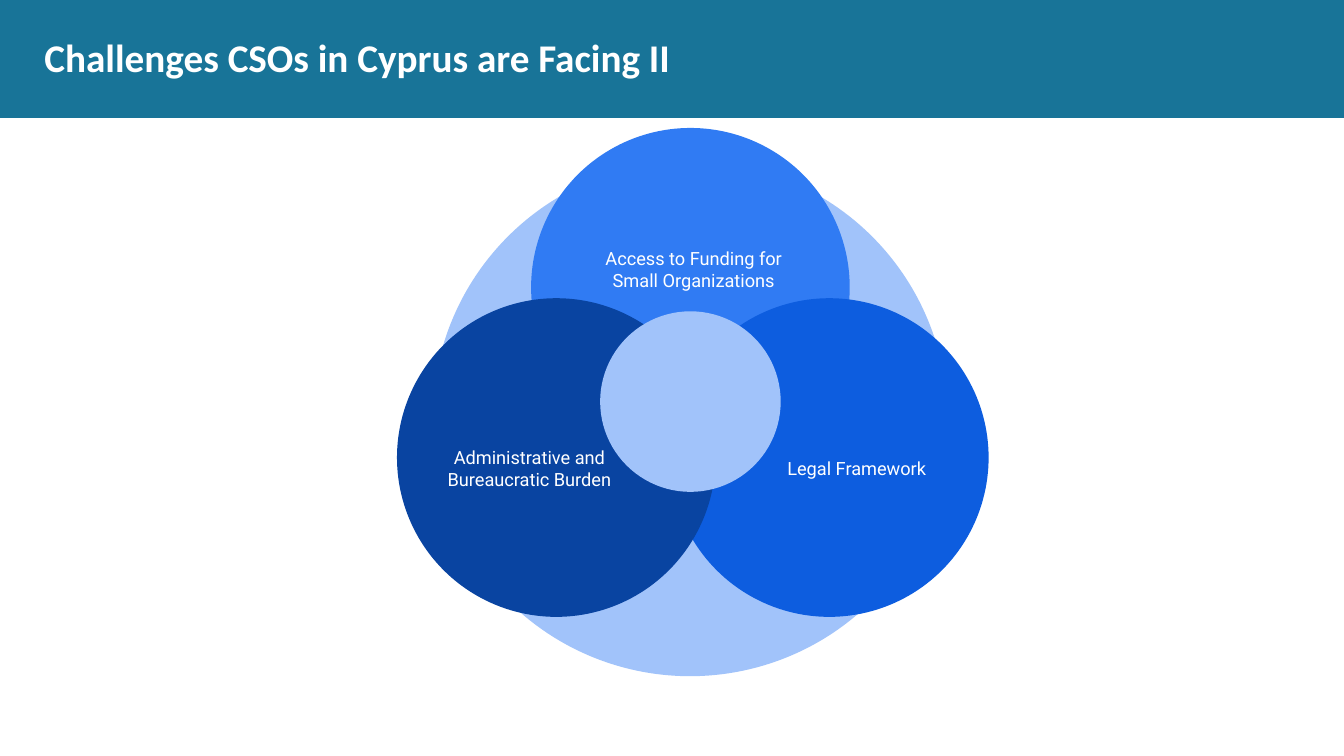
"""Build a slide with three overlapping circles naming challenges for CSOs in Cyprus."""
from pptx import Presentation
from pptx.dml.color import RGBColor
from pptx.enum.shapes import MSO_SHAPE as Preset
from pptx.enum.text import MSO_ANCHOR as Anchor, PP_ALIGN as Align
from pptx.util import Cm, Pt

TITLE = "Challenges CSOs in Cyprus are Facing II"
WHITE, TEAL, PALE = "FFFFFF", "187498", "A1C3FA"
SLIDE_WIDTH, SLIDE_HEIGHT, BAND_HEIGHT = 33.87, 19.05, 2.97

DISC = (17.39, 10.55, 12.98)
HUB = (17.4, 10.12, 4.55)
PETAL_SIZE = 8.03
LABEL_WIDTH, LABEL_HEIGHT = 5.54, 2.59
CHALLENGES = [
    ("Access to Funding for Small Organizations", "307BF3", (17.4, 7.24), (17.48, 6.78)),
    ("Legal Framework", "0D5DDF", (20.9, 11.53), (21.59, 11.79)),
    ("Administrative and Bureaucratic Burden", "0944A1", (14.02, 11.53), (13.34, 11.79)),
]


def color(code):
    return RGBColor.from_string(code)


def box(x, y, width, height):
    """Return the Cm frame centred on x, y."""
    return Cm(x - width / 2), Cm(y - height / 2), Cm(width), Cm(height)


def add_filled(slide, preset, frame, fill):
    shape = slide.shapes.add_shape(preset, *frame)
    shape.shadow.inherit = False
    shape.fill.solid()
    shape.fill.fore_color.rgb = color(fill)
    shape.line.fill.background()
    return shape


def add_circle(slide, x, y, size, fill):
    add_filled(slide, Preset.OVAL, box(x, y, size, size), fill)


def write(holder, text, font, size, inset, align, bold=False):
    frame = holder.text_frame
    frame.word_wrap = True
    frame.vertical_anchor = Anchor.MIDDLE
    frame.margin_left = frame.margin_right = Cm(inset)
    frame.margin_top = frame.margin_bottom = Cm(inset)
    paragraph = frame.paragraphs[0]
    paragraph.alignment = align
    run = paragraph.add_run()
    run.text = text
    run.font.name, run.font.size, run.font.bold = font, Pt(size), bold
    run.font.color.rgb = color(WHITE)


def main():
    deck = Presentation()
    deck.slide_width, deck.slide_height = Cm(SLIDE_WIDTH), Cm(SLIDE_HEIGHT)
    slide = deck.slides.add_slide(deck.slide_layouts[5])

    title = slide.shapes.title
    band_frame = (0, 0, deck.slide_width, Cm(BAND_HEIGHT))
    band = add_filled(slide, Preset.RECTANGLE, band_frame, TEAL)
    title.element.addprevious(band.element)
    title.left, title.top, title.width, title.height = Cm(1.12), Cm(0.48), Cm(31.65), Cm(1.88)
    write(title, TITLE, "Calibri", 28, 0, Align.LEFT, bold=True)

    add_circle(slide, *DISC, PALE)
    for challenge, fill, petal_center, label_center in CHALLENGES:
        add_circle(slide, *petal_center, PETAL_SIZE, fill)
        label = slide.shapes.add_textbox(*box(*label_center, LABEL_WIDTH, LABEL_HEIGHT))
        write(label, challenge, "Roboto", 13, 0.33, Align.CENTER)
    add_circle(slide, *HUB, PALE)

    deck.save("out.pptx")


if __name__ == "__main__":
    main()
